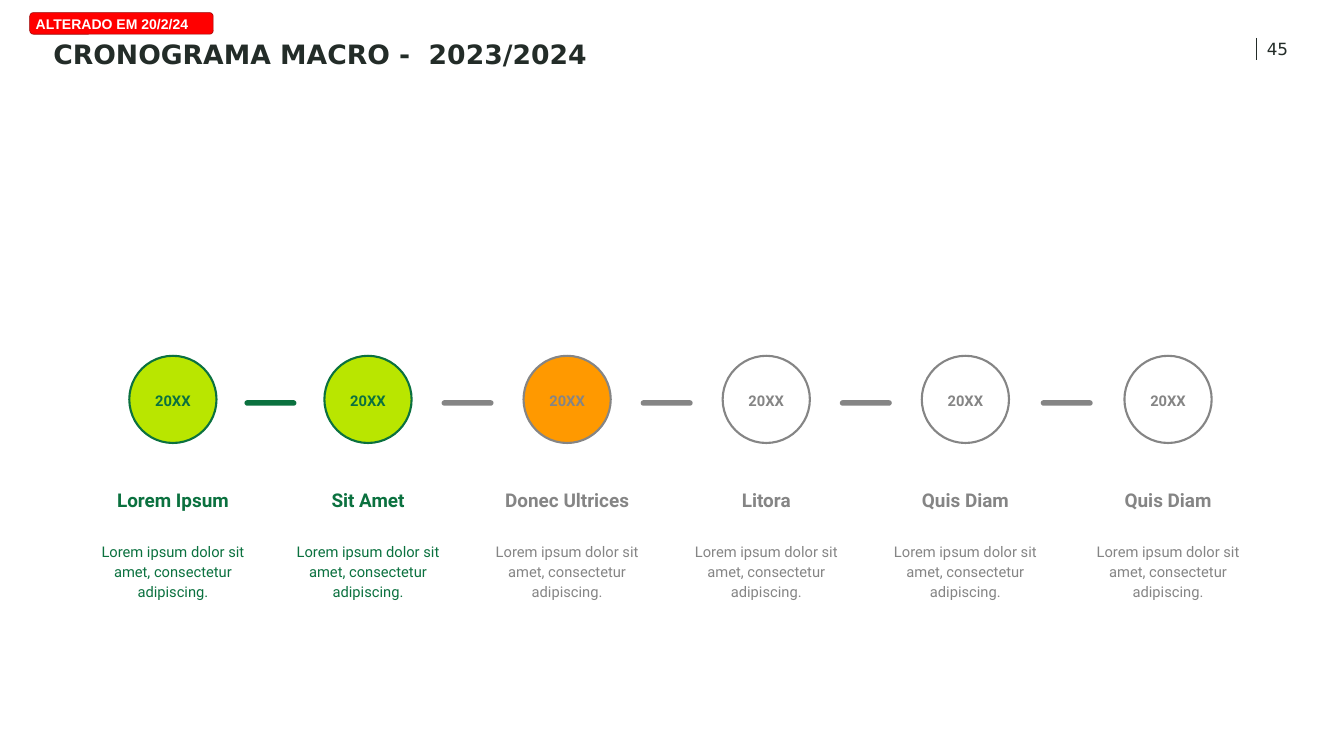
from dataclasses import dataclass
from itertools import pairwise
from typing import Optional

from lxml.etree import SubElement
from pptx import Presentation
from pptx.dml.color import RGBColor
from pptx.enum.shapes import MSO_CONNECTOR, MSO_SHAPE
from pptx.enum.text import MSO_ANCHOR, PP_ALIGN
from pptx.oxml.ns import qn
from pptx.util import Inches, Pt

INK = RGBColor(0x23, 0x2C, 0x28)
WHITE = RGBColor(0xFF, 0xFF, 0xFF)
RED = RGBColor(0xFF, 0x00, 0x00)
DARK_RED = RGBColor(0x98, 0x00, 0x00)
GREEN = RGBColor(0x0B, 0x71, 0x3F)
LIME = RGBColor(0xB9, 0xE6, 0x00)
ORANGE = RGBColor(0xFF, 0x99, 0x00)
GRAY = RGBColor(0x85, 0x85, 0x85)

CIRCLE_SIZE, CIRCLE_TOP = 1.73, 7.06
DASH_WIDTH, DASH_HEIGHT, DASH_TOP = 1.03, 0.11, 7.94
YEAR_WIDTH = 1.27
MILESTONE_INSET = 0.27
CAPTION = "Lorem ipsum dolor sit amet, consectetur adipiscing."


@dataclass(frozen=True)
class TextStyle:
    size: float
    color: RGBColor
    font: str = "Roboto"
    bold: bool = False
    align: PP_ALIGN = PP_ALIGN.LEFT
    anchor: MSO_ANCHOR = MSO_ANCHOR.TOP
    inset_x: float = 0.1
    inset_y: float = 0.1
    line_spacing: float = 1.0
    space_after: float = 0


@dataclass(frozen=True)
class Milestone:
    center: float
    title: str
    color: RGBColor = GRAY
    fill: Optional[RGBColor] = None
    text_width: float = 3.97


MILESTONES = [
    Milestone(3.43, "Lorem Ipsum", GREEN, LIME, 3.82),
    Milestone(7.3, "Sit Amet", GREEN, LIME, 3.82),
    Milestone(11.25, "Donec Ultrices", fill=ORANGE),
    Milestone(15.2, "Litora", text_width=3.82),
    Milestone(19.15, "Quis Diam"),
    Milestone(23.17, "Quis Diam"),
]


def write(shape, text: str, style: TextStyle) -> None:
    frame = shape.text_frame
    frame.word_wrap = True
    frame.vertical_anchor = style.anchor
    frame.margin_left = frame.margin_right = Inches(style.inset_x)
    frame.margin_top = frame.margin_bottom = Inches(style.inset_y)
    paragraph = frame.paragraphs[0]
    paragraph.text = text
    paragraph.alignment = style.align
    paragraph.line_spacing = style.line_spacing
    paragraph.space_after = Pt(style.space_after)
    font = paragraph.font
    font.name, font.size, font.bold = style.font, Pt(style.size), style.bold
    font.color.rgb = style.color


def add_text(shapes, left: float, top: float, width: float, height: float,
             text: str, style: TextStyle) -> None:
    box = shapes.add_textbox(Inches(left), Inches(top), Inches(width), Inches(height))
    write(box, text, style)


def add_block(shapes, kind: MSO_SHAPE, left: float, top: float, width: float, height: float,
              fill: Optional[RGBColor], line: Optional[RGBColor] = None,
              line_width: float = 0):
    block = shapes.add_shape(kind, Inches(left), Inches(top), Inches(width), Inches(height))
    block.shadow.inherit = False
    if fill is None:
        block.fill.background()
    else:
        block.fill.solid()
        block.fill.fore_color.rgb = fill
    if line is None:
        block.line.fill.background()
    else:
        block.line.color.rgb = line
        block.line.width = Pt(line_width)
    return block


def add_milestone(slide, milestone: Milestone) -> None:
    shapes = slide.shapes.add_group_shape().shapes

    def milestone_style(size: float, **options) -> TextStyle:
        return TextStyle(size, milestone.color, align=PP_ALIGN.CENTER, line_spacing=1.15,
                         inset_x=MILESTONE_INSET, inset_y=MILESTONE_INSET, **options)

    add_block(shapes, MSO_SHAPE.OVAL, milestone.center - CIRCLE_SIZE / 2, CIRCLE_TOP,
              CIRCLE_SIZE, CIRCLE_SIZE, milestone.fill, milestone.color, 3)
    add_text(shapes, milestone.center - YEAR_WIDTH / 2, 7.53, YEAR_WIDTH, 0.94,
             "20XX", milestone_style(21, bold=True, space_after=43))
    text_left = milestone.center - milestone.text_width / 2
    add_text(shapes, text_left, 9.11, milestone.text_width, 1.3, milestone.title,
             milestone_style(27, bold=True, anchor=MSO_ANCHOR.BOTTOM))
    add_text(shapes, text_left, 10.44, milestone.text_width, 2.15, CAPTION,
             milestone_style(21, space_after=43))


def add_dash(slide, before: Milestone, after: Milestone) -> None:
    middle = (before.center + after.center) / 2
    dash = add_block(slide.shapes, MSO_SHAPE.ROUNDED_RECTANGLE, middle - DASH_WIDTH / 2,
                     DASH_TOP, DASH_WIDTH, DASH_HEIGHT, after.color)
    dash.adjustments[0] = 0.5


def add_header(slide) -> None:
    # Page number and its rule
    add_text(slide.shapes, 24.27, 0.72, 1.38, 0.62, "45",
             TextStyle(24, INK, "DejaVu Sans", align=PP_ALIGN.RIGHT, inset_y=0.05))
    rule = slide.shapes.add_connector(MSO_CONNECTOR.STRAIGHT, Inches(24.92), Inches(0.75),
                                      Inches(24.92), Inches(1.2))
    rule.line.color.rgb = INK
    rule.line.width = Pt(2)
    SubElement(rule.element.spPr, qn("a:effectLst"))

    # Title
    add_text(slide.shapes, 0.96, 0.64, 21.78, 0.71, "CRONOGRAMA MACRO -  2023/2024",
             TextStyle(38, INK, "DejaVu Sans", bold=True, line_spacing=1.02))

    # Revision tag
    tag = add_block(slide.shapes, MSO_SHAPE.ROUNDED_RECTANGLE, 0.59, 0.25, 3.64, 0.43,
                    RED, DARK_RED, 0.75)
    write(tag, "ALTERADO EM 20/2/24",
          TextStyle(20, WHITE, "Arial", bold=True, anchor=MSO_ANCHOR.MIDDLE))


def main() -> None:
    presentation = Presentation()
    presentation.slide_width = Inches(26.66)
    presentation.slide_height = Inches(15)
    slide = presentation.slides.add_slide(presentation.slide_layouts[6])

    add_header(slide)

    # Timeline
    for milestone in MILESTONES:
        add_milestone(slide, milestone)
    for before, after in pairwise(MILESTONES):
        add_dash(slide, before, after)

    presentation.save("out.pptx")


if __name__ == "__main__":
    main()
